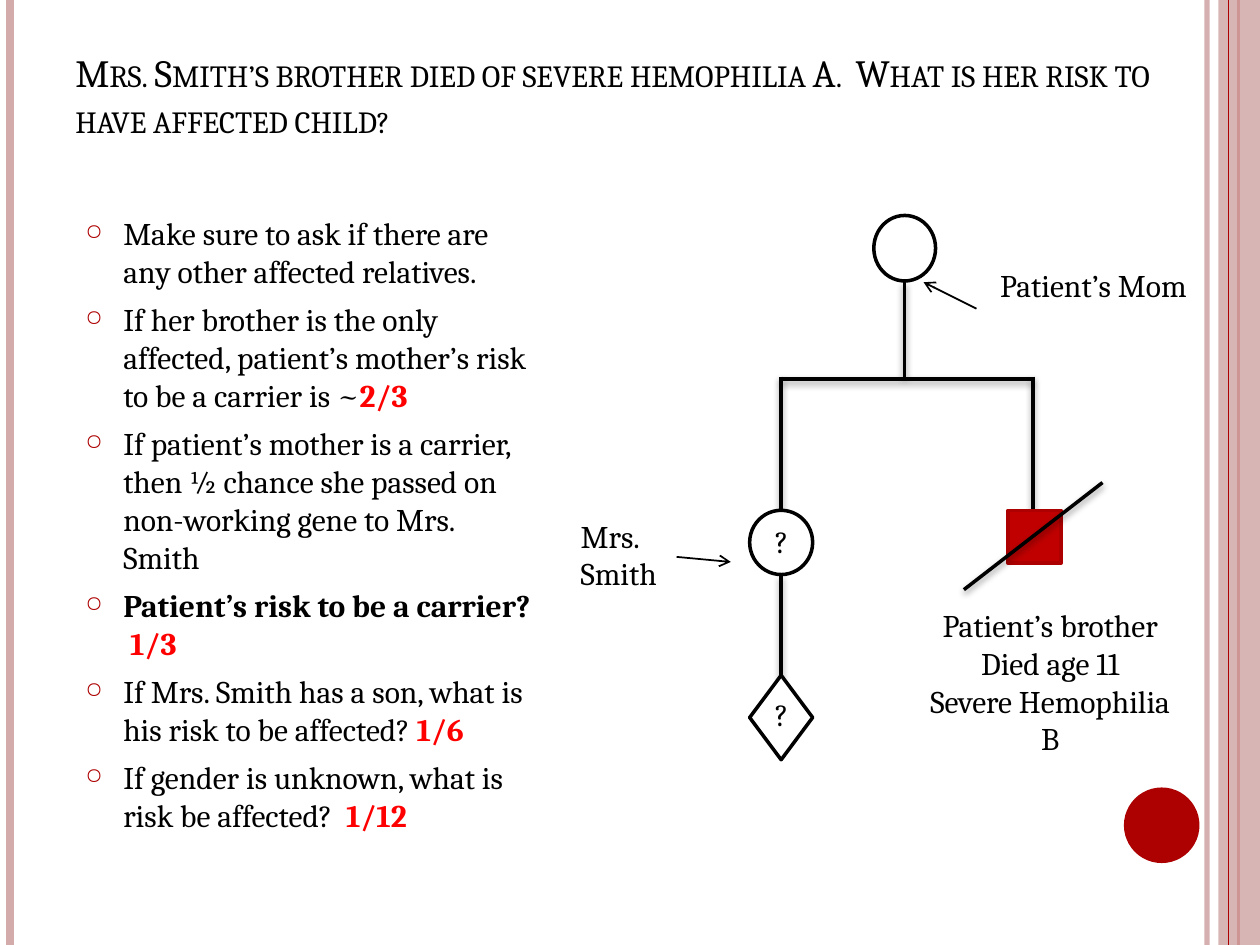
from lxml.etree import SubElement
from pptx import Presentation
from pptx.dml.color import RGBColor
from pptx.enum.shapes import MSO_CONNECTOR, MSO_SHAPE
from pptx.enum.text import MSO_ANCHOR, PP_ALIGN
from pptx.oxml.ns import qn
from pptx.util import Inches, Pt

BLACK = RGBColor(0x00, 0x00, 0x00)
WHITE = RGBColor(0xFF, 0xFF, 0xFF)
RED = RGBColor(0xFF, 0x00, 0x00)
CRIMSON = RGBColor(0xAD, 0x01, 0x01)
AFFECTED = RGBColor(0xC0, 0x00, 0x00)
PINK = RGBColor(0xD3, 0xAB, 0xAB)
FONT = "Cambria"

TITLE = ("Mrs. Smith’s brother died of severe hemophilia A.  "
         "What is her risk to have affected child?")
PLAIN, BOLD, ANSWER = (BLACK, False), (BLACK, True), (RED, True)
POINTS = [
    [("Make sure to ask if there are any other affected relatives.", PLAIN)],
    [("If her brother is the only affected, patient’s mother’s risk to be a carrier is ~", PLAIN),
     ("2/3", ANSWER)],
    [("If patient’s mother is a carrier, then ½ chance she passed on "
      "non-working gene to Mrs. Smith", PLAIN)],
    [("Patient’s risk to be a carrier?  ", BOLD), ("1/3", ANSWER)],
    [("If Mrs. Smith has a son, what is his risk to be affected? ", PLAIN), ("1/6", ANSWER)],
    [("If gender is unknown, what is risk be affected?  ", PLAIN), ("1/12", ANSWER)],
]

MOM_X, SMITH_X, BROTHER_X = 7.18, 6.2, 8.2
SIBLING_Y, CHILD_Y = 4.05, 5.36
FAMILY_LINES = [
    (MOM_X, 2.24, MOM_X, 2.99),
    (SMITH_X, 3.01, BROTHER_X, 3.01),
    (BROTHER_X, 2.99, BROTHER_X, SIBLING_Y),
    (SMITH_X, 2.99, SMITH_X, SIBLING_Y),
    (SMITH_X, 4.56, SMITH_X, 5.38),
]
DEATH_LINE = (7.65, 4.68, 8.75, 3.83)
ARROWS = [(7.75, 2.45, 7.33, 2.24), (5.37, 4.42, 5.8, 4.46)]
PEOPLE = [
    (MSO_SHAPE.OVAL, MOM_X, 1.71, 0.49, 0.52, WHITE, BLACK),
    (MSO_SHAPE.OVAL, SMITH_X, SIBLING_Y, 0.5, 0.51, WHITE, BLACK),
    (MSO_SHAPE.RECTANGLE, BROTHER_X + 0.01, SIBLING_Y, 0.42, 0.42, AFFECTED, CRIMSON),
    (MSO_SHAPE.DIAMOND, SMITH_X, CHILD_Y, 0.5, 0.67, WHITE, BLACK),
]
LABELS = [
    (7.84, 2.06, 1.83, 0.42, PP_ALIGN.LEFT, ["Patient’s Mom"]),
    (4.51, 4.05, 1.08, 0.71, PP_ALIGN.LEFT, ["Mrs. Smith"]),
    (7.21, 4.76, 2.25, 1.31, PP_ALIGN.CENTER,
     ["Patient’s brother Died age 11", "Severe Hemophilia B"]),
    (6.01, 5.47, 0.39, 0.42, PP_ALIGN.CENTER, ["?"]),
    (6.01, 4.09, 0.39, 0.42, PP_ALIGN.CENTER, ["?"]),
]

prs = Presentation()
prs.slide_width, prs.slide_height = Inches(10), Inches(7.5)
s = prs.slides.add_slide(prs.slide_layouts[6])


def set_alpha(fill_parent, percent):
    color = fill_parent.find(qn("a:solidFill"))[0]
    SubElement(color, qn("a:alpha"), val=str(percent * 1000))


def add_line(ends, color, width, shadow=False, arrow=False, alpha=None):
    line = s.shapes.add_connector(MSO_CONNECTOR.STRAIGHT, *map(Inches, ends))
    line.line.color.rgb = color
    line.line.width = Pt(width)
    ln = line.line._get_or_add_ln()
    if alpha:
        set_alpha(ln, alpha)
    if arrow:
        SubElement(ln, qn("a:tailEnd"), type="arrow")
    effects = SubElement(line._element.spPr, qn("a:effectLst"))
    if shadow:
        outer = SubElement(effects, qn("a:outerShdw"), blurRad=str(Pt(4)),
                           dist=str(Pt(2)), dir="5400000", rotWithShape="0")
        color = SubElement(outer, qn("a:srgbClr"), val="000000")
        SubElement(color, qn("a:alpha"), val="40000")


def add_solid(kind, x, y, w, h, fill, outline=None):
    sp = s.shapes.add_shape(kind, *map(Inches, (x, y, w, h)))
    sp.shadow.inherit = False
    sp.fill.solid()
    sp.fill.fore_color.rgb = fill
    if outline is None:
        sp.line.fill.background()
    else:
        sp.line.color.rgb = outline
        sp.line.width = Pt(2)
    return sp


def add_text(x, y, w, h, paragraphs, size=18, align=PP_ALIGN.LEFT):
    tf = s.shapes.add_textbox(*map(Inches, (x, y, w, h))).text_frame
    tf.word_wrap = True
    for i, runs in enumerate(paragraphs):
        p = tf.paragraphs[0] if i == 0 else tf.add_paragraph()
        p.alignment = align
        for text, (color, bold) in runs:
            r = p.add_run()
            r.text = text
            r.font.name, r.font.size = FONT, Pt(size)
            r.font.color.rgb, r.font.bold = color, bold
    return tf


def add_bullet(p):
    p.space_before = Pt(6)
    pPr = p._p.get_or_add_pPr()
    pPr.set("marL", str(Inches(0.3)))
    pPr.set("indent", str(Inches(-0.3)))
    color = SubElement(pPr, qn("a:buClr"))
    SubElement(color, qn("a:srgbClr"), val=str(CRIMSON))
    SubElement(pPr, qn("a:buSzPct"), val="70000")
    SubElement(pPr, qn("a:buChar"), char="○")


add_line((9.58, 0, 9.58, 7.5), PINK, 3, alpha=93)
add_line((0.08, 0, 0.08, 7.5), PINK, 4.5)
add_line((9.83, 0, 9.83, 7.5), CRIMSON, 1.5)
band = add_solid(MSO_SHAPE.RECTANGLE, 9.67, 0, 0.33, 7.5, PINK)
set_alpha(band._element.spPr, 87)
add_line((9.75, 0, 9.75, 7.5), CRIMSON, 0.75)
add_solid(MSO_SHAPE.OVAL, 8.92, 6.25, 0.6, 0.6, CRIMSON)

body = add_text(0.58, 1.65, 3.75, 5.21, POINTS)
for p in body.paragraphs:
    add_bullet(p)

title = add_text(0.5, 0.3, 8.96, 0.87, [[(TITLE, PLAIN)]], size=22)
title.vertical_anchor = MSO_ANCHOR.BOTTOM
title.paragraphs[0].runs[0].font._element.set("cap", "small")

for ends in FAMILY_LINES:
    add_line(ends, BLACK, 2, shadow=True)
for kind, center, top, w, h, fill, outline in PEOPLE:
    add_solid(kind, center - w / 2, top, w, h, fill, outline)
add_line(DEATH_LINE, BLACK, 2, shadow=True)
for ends in ARROWS:
    add_line(ends, BLACK, 1, arrow=True)
for x, y, w, h, align, lines in LABELS:
    add_text(x, y, w, h, [[(text, PLAIN)] for text in lines], align=align)

prs.save("out.pptx")
